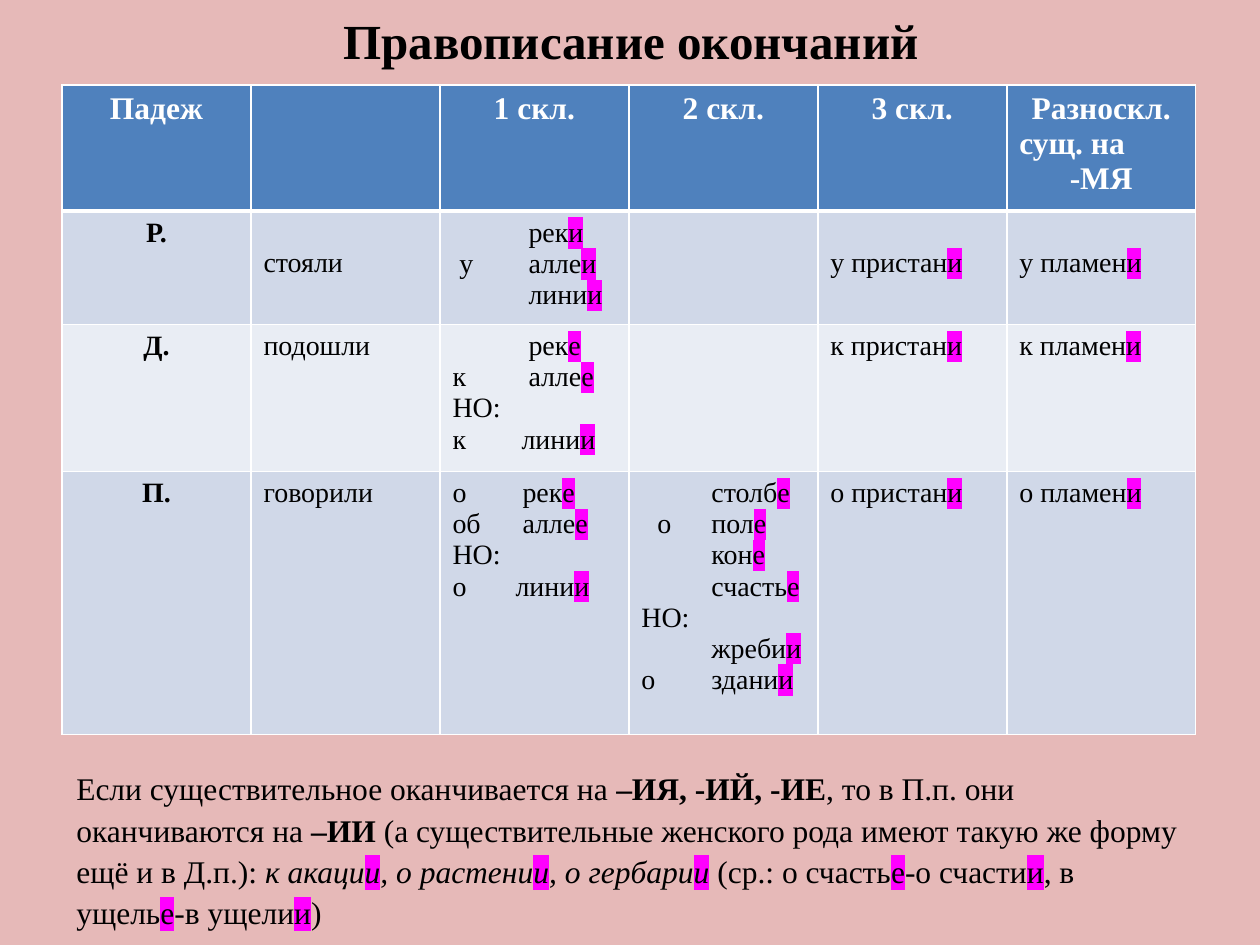
from dataclasses import dataclass

from lxml.etree import SubElement
from pptx import Presentation
from pptx.dml.color import RGBColor as Color
from pptx.enum.text import MSO_ANCHOR as Anchor, PP_ALIGN as Align
from pptx.oxml.ns import qn
from pptx.util import Pt

PX = 914400 // 126


@dataclass(frozen=True)
class Theme:
    font: str = "Times New Roman"
    page: str = "E6B9B8"
    ink: str = "000000"
    white: str = "FFFFFF"
    header: str = "4F81BD"
    bands: tuple = ("D0D8E8", "E9EDF4")
    mark: str = "FF00FF"
    title: int = 28
    text: int = 18
    cell: int = 16


THEME = Theme()

TITLE = "Правописание окончаний"
HEADERS = ["Падеж", "", "1 скл.", "2 скл.", "3 скл.", "Разноскл.\nсущ. на\n-МЯ"]
ROWS = [
    ["*Р.*", "стояли", "\tрек[и]\n у\tалле[и]\n\tлини[и]", "",
     "у пристан[и]", "у пламен[и]"],
    ["*Д.*", "подошли", "\t\tрек[е]\nк\t\tалле[е]\nНО:\nк\tлини[и]", "",
     "к пристан[и]", "к пламен[и]"],
    ["*П.*", "говорили", "о\t\tрек[е]\nоб\t\tалле[е]\nНО:\nо\tлини[и]",
     "\t\tстолб[е]\n\tо\tпол[е]\n\t\tкон[е]\n\t\tсчасть[е]\nНО:\n"
     "\t\tжреби[и]\nо\t\tздани[и]", "о пристан[и]", "о пламен[и]"],
]
TAB_STOPS = {(1, 2): (76,), (2, 2): (69, 76), (3, 2): (63, 70), (3, 3): (16, 70)}
LOWERED = {(1, 1), (1, 4), (1, 5)}
RULE = (
    "Если существительное оканчивается на *–ИЯ, -ИЙ, -ИЕ*, то в П.п. они "
    "оканчиваются на *–ИИ *(а существительные женского рода имеют такую же "
    "форму ещё и в Д.п.): _к акаци[и], о растени[и], о гербари[и] _"
    "(ср.: о счасть[е]-о счасти[и], в ущель[е]-в ущели[и])"
)

TABLE_LEFT, TABLE_TOP = 62, 85
COLUMN_WIDTH = 189
ROW_HEIGHTS = [117, 106, 138, 263]
INSET_TOP, CELL_LINE = 6, 31


def split_marks(text):
    style = {"*": False, "_": False, "[": False}
    piece = ""
    for letter in text:
        if letter in "*_[]":
            if piece:
                yield piece, dict(style)
            piece = ""
            key = "[" if letter == "]" else letter
            style[key] = not style[key]
        else:
            piece += letter
    if piece:
        yield piece, style


def write(frame, text, size, color=THEME.ink, bold=False, aligns=(Align.LEFT,),
          stops=(), spacing=None):
    frame.word_wrap = True
    for index, line in enumerate(text.split("\n")):
        para = frame.paragraphs[0] if index == 0 else frame.add_paragraph()
        para.alignment = aligns[index % len(aligns)]
        if spacing:
            para.line_spacing = spacing
        if stops:
            tabs = SubElement(para._p.get_or_add_pPr(), qn("a:tabLst"))
            for stop in stops:
                SubElement(tabs, qn("a:tab"), pos=str(stop * PX), algn="l")
        for piece, style in split_marks(line):
            span = para.add_run()
            span.text = piece
            font = span.font
            font.size = Pt(size)
            font.bold = bold or style["*"]
            font.italic = style["_"]
            font.color.rgb = Color.from_string(color)
            if style["["]:
                highlight = SubElement(span._r.get_or_add_rPr(), qn("a:highlight"))
                SubElement(highlight, qn("a:srgbClr"), val=THEME.mark)
            font.name = THEME.font


def add_text(page, left, top, width, height, text, anchor=Anchor.TOP, **style):
    box = page.shapes.add_textbox(left * PX, top * PX, width * PX, height * PX)
    box.text_frame.vertical_anchor = anchor
    write(box.text_frame, text, **style)


def paint(cell, fill, bottom=1):
    properties = cell._tc.get_or_add_tcPr()
    for side, width in (("L", 1), ("R", 1), ("T", 1), ("B", bottom)):
        line = SubElement(properties, qn(f"a:ln{side}"), w=str(Pt(width)))
        SubElement(SubElement(line, qn("a:solidFill")), qn("a:srgbClr"),
                   val=THEME.white)
    cell.fill.solid()
    cell.fill.fore_color.rgb = Color.from_string(fill)


def add_endings_table(page):
    count = len(HEADERS)
    table = page.shapes.add_table(
        len(ROW_HEIGHTS), count, TABLE_LEFT * PX, TABLE_TOP * PX,
        count * COLUMN_WIDTH * PX, sum(ROW_HEIGHTS) * PX).table
    for column in table.columns:
        column.width = COLUMN_WIDTH * PX
    for row, height in zip(table.rows, ROW_HEIGHTS):
        row.height = height * PX
    for column, text in enumerate(HEADERS):
        cell = table.cell(0, column)
        paint(cell, THEME.header, bottom=3)
        write(cell.text_frame, text, THEME.text, color=THEME.white, bold=True,
              aligns=(Align.CENTER, Align.LEFT))
    for row, texts in enumerate(ROWS, 1):
        for column, text in enumerate(texts):
            cell = table.cell(row, column)
            paint(cell, THEME.bands[(row - 1) % 2])
            if (row, column) in LOWERED:
                cell.margin_top = (INSET_TOP + CELL_LINE) * PX
            write(cell.text_frame, text, THEME.cell,
                  aligns=(Align.LEFT if column else Align.CENTER,),
                  stops=TAB_STOPS.get((row, column), ()))


def main():
    deck = Presentation()
    deck.slide_width, deck.slide_height = 1260 * PX, 945 * PX
    page = deck.slides.add_slide(deck.slide_layouts[6])
    page.background.fill.solid()
    page.background.fill.fore_color.rgb = Color.from_string(THEME.page)
    add_text(page, 64, 16, 1134, 48, TITLE, anchor=Anchor.MIDDLE,
             size=THEME.title, bold=True, aligns=(Align.CENTER,))
    add_endings_table(page)
    add_text(page, 64, 760, 1134, 165, RULE, size=THEME.text, spacing=1.09)
    deck.save("out.pptx")


if __name__ == "__main__":
    main()
